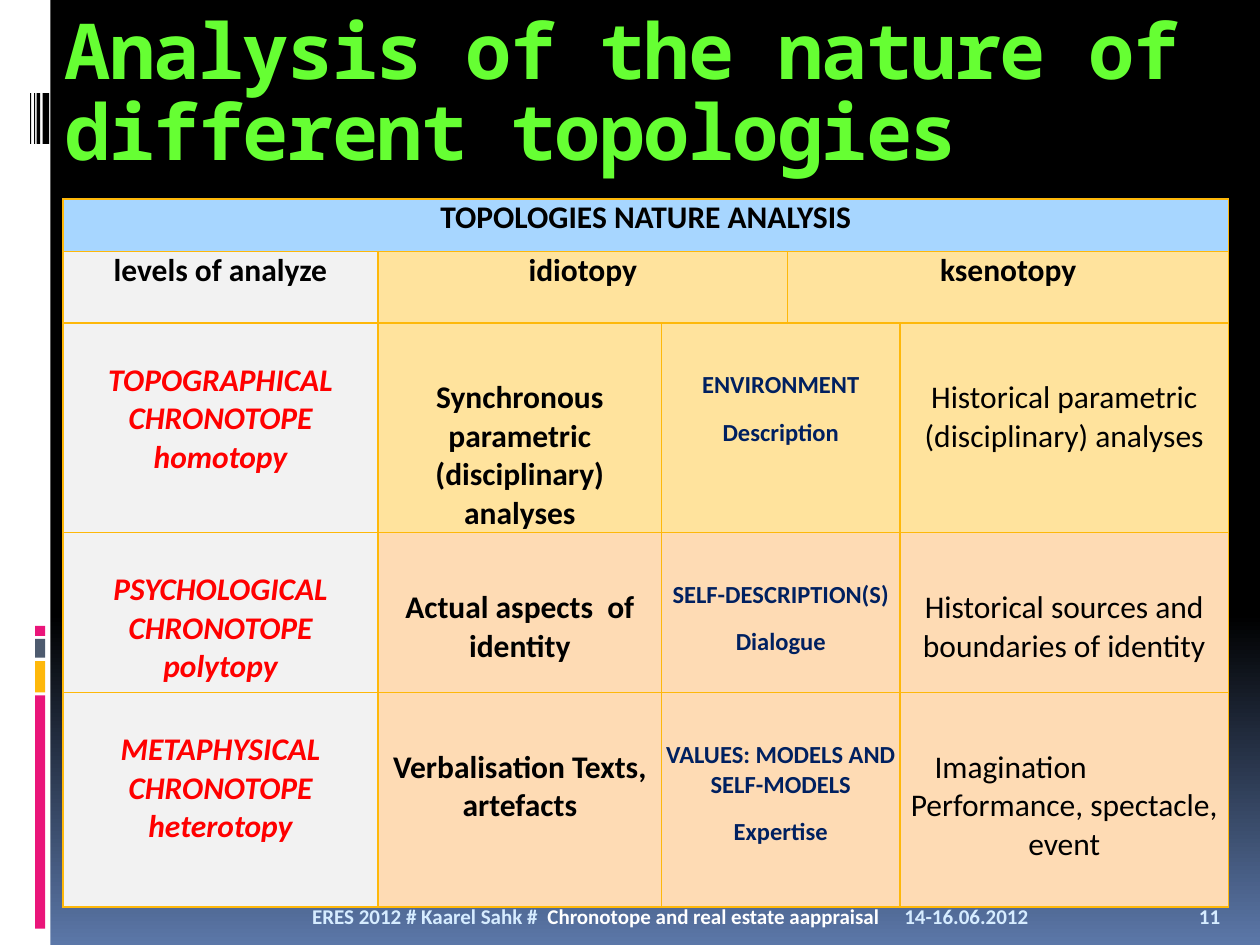
from pptx import Presentation
from pptx.dml.color import RGBColor
from pptx.enum.shapes import MSO_SHAPE
from pptx.enum.text import MSO_ANCHOR, PP_ALIGN
from pptx.oxml import parse_xml
from pptx.oxml.ns import nsdecls
from pptx.util import Cm, Pt

COLORS = {
    "black": "000000", "white": "FFFFFF", "dusk": "5B77A8", "pink": "EA157A",
    "gold": "FEB80A", "slate": "4E5B6F", "green": "66FF33", "ice": "D6ECFF",
    "sky": "A7D6FF", "grey": "F2F2F2", "sand": "FFE39D", "peach": "FEDBB4",
    "red": "FF0000", "navy": "002060",
}


def rgb(name):
    return RGBColor.from_string(COLORS[name])


class SlideBuilder:
    """Holds the text style and the current page, and draws its elements."""

    def __init__(self, page, font="Calibri"):
        self.page = page
        self.font = font

    def background(self, start, end, position):
        fill = self.page.background.fill
        fill.gradient()
        fill.gradient_angle = 270
        first, last = fill.gradient_stops
        first.color.rgb, first.position = rgb(start), position
        last.color.rgb, last.position = rgb(end), 1

    def bar(self, left, top, width, height, color):
        shape = self.page.shapes.add_shape(
            MSO_SHAPE.RECTANGLE, Cm(left), Cm(top), Cm(width), Cm(height))
        shape.shadow.inherit = False
        shape.fill.solid()
        shape.fill.fore_color.rgb = rgb(color)
        shape.line.fill.background()

    def style(self, para, size, color=None, bold=True, italic=False, font=None):
        para.font.name = font or self.font
        para.font.size = Pt(size)
        para.font.bold = bold
        para.font.italic = italic
        if color:
            para.font.color.rgb = rgb(color)

    def text(self, place, spans, size=12, font=None, align=PP_ALIGN.LEFT,
             anchor=MSO_ANCHOR.BOTTOM):
        box = self.page.shapes.add_textbox(*map(Cm, place))
        frame = box.text_frame
        frame.word_wrap = True
        frame.vertical_anchor = anchor
        para = frame.paragraphs[0]
        para.alignment = align
        self.style(para, size, font=font)
        for words, color in spans:
            span = para.add_run()
            span.text = words
            span.font.color.rgb = rgb(color)
        return para

    def title(self, place, words):
        para = self.text(place, [(words, "green")], 44, "Noto Sans Mono",
                         anchor=MSO_ANCHOR.TOP)
        para.line_spacing = 0.88
        para.runs[0].font._element.set("spc", "-100")

    def table(self, left, top, widths, heights):
        frame = self.page.shapes.add_table(
            len(heights), len(widths), Cm(left), Cm(top),
            Cm(sum(widths)), Cm(sum(heights)))
        table = frame.table
        for column, width in zip(table.columns, widths):
            column.width = Cm(width)
        for row, height in zip(table.rows, heights):
            row.height = Cm(height)
        for cell in table.iter_cells():
            self.border(cell, "gold", 0.94)
        return table

    def border(self, cell, color, points):
        properties = cell._tc.get_or_add_tcPr()
        for side in ("lnL", "lnR", "lnT", "lnB"):
            properties.append(parse_xml(
                f'<a:{side} {nsdecls("a")} w="{Pt(points)}"><a:solidFill>'
                f'<a:srgbClr val="{COLORS[color]}"/></a:solidFill></a:{side}>'))

    def cell(self, cell, lines, fill, gap=0, spacing=5, **style):
        cell.margin_left = cell.margin_right = cell.margin_bottom = 0
        cell.margin_top = Cm(gap)
        cell.fill.solid()
        cell.fill.fore_color.rgb = rgb(fill)
        frame = cell.text_frame
        for index, words in enumerate(lines):
            para = frame.add_paragraph() if index else frame.paragraphs[0]
            para.text = words
            para.alignment = PP_ALIGN.CENTER
            para.space_before = para.space_after = Pt(spacing)
            self.style(para, **style)


BARS = [
    (0, 0, 1.02, 19.05, "white"),
    (0.71, 14.02, 0.2, 4.7, "pink"),
    (0.71, 13.33, 0.2, 0.63, "gold"),
    (0.71, 12.88, 0.2, 0.38, "slate"),
    (0.71, 12.62, 0.2, 0.2, "pink"),
    (0.86, 1.88, 0.13, 1.02, "black"),
    (0.74, 1.88, 0.07, 1.02, "black"),
    (0.69, 1.88, 0.02, 1.02, "black"),
    (0.61, 1.88, 0.02, 1.02, "black"),
]

LEVELS = [
    ("sand", ["TOPOGRAPHICAL", "CHRONOTOPE", "homotopy"],
     ["Synchronous parametric (disciplinary) analyses"],
     ["ENVIRONMENT", "Description"],
     ["Historical parametric (disciplinary) analyses"]),
    ("peach", ["PSYCHOLOGICAL", "CHRONOTOPE", "polytopy"],
     ["Actual aspects  of identity"],
     ["SELF-DESCRIPTION(S)", "Dialogue"],
     ["Historical sources and boundaries of identity"]),
    ("peach", ["METAPHYSICAL", "CHRONOTOPE", "heterotopy"],
     ["Verbalisation Texts, artefacts"],
     ["VALUES: MODELS AND SELF-MODELS", "Expertise"],
     ["Imagination", "Performance, spectacle, event"]),
]


def fill_table(builder, table):
    table.cell(0, 0).merge(table.cell(0, 4))
    table.cell(1, 1).merge(table.cell(1, 2))
    table.cell(1, 3).merge(table.cell(1, 4))
    headings = [
        (0, 0, "TOPOLOGIES NATURE ANALYSIS", "sky"),
        (1, 0, "levels of analyze", "grey"),
        (1, 1, "idiotopy", "sand"),
        (1, 3, "ksenotopy", "sand"),
    ]
    for row, column, words, fill in headings:
        builder.cell(table.cell(row, column), [words], fill, size=18, color="black")
    for row, (fill, level, synchronous, method, history) in enumerate(LEVELS, 2):
        table.cell(row, 2).merge(table.cell(row, 3))
        builder.cell(table.cell(row, 0), level, "grey", 0.77, 0,
                     size=18, color="red", italic=True)
        builder.cell(table.cell(row, 1), synchronous, fill, 1.13,
                     size=18, color="black")
        builder.cell(table.cell(row, 2), method, fill, 0.96,
                     size=14, color="navy")
        builder.cell(table.cell(row, 4), history, fill, 1.13, 0,
                     size=18, color="black", bold=False)
    imagination = table.cell(4, 4).text_frame.paragraphs[0]
    imagination.alignment = PP_ALIGN.LEFT
    imagination._p.get_or_add_pPr().set("marL", str(Cm(0.7)))


def main():
    deck = Presentation()
    deck.slide_width, deck.slide_height = Cm(25.4), Cm(19.05)
    builder = SlideBuilder(deck.slides.add_slide(deck.slide_layouts[6]))
    builder.background("black", "dusk", 0.65)
    for bar in BARS:
        builder.bar(*bar)
    builder.title((1.06, 0.17, 24.34, 2.54),
                  "Analysis of the nature of different topologies")
    builder.text((17.98, 17.83, 5.92, 1.02), [("14-16.06.2012", "ice")])
    builder.text((2.54, 17.83, 15.44, 1.02),
                 [("ERES 2012 # Kaarel Sahk #  ", "ice"),
                  ("Chronotope and real estate aappraisal", "white")],
                 align=PP_ALIGN.RIGHT)
    builder.text((23.92, 17.83, 1.27, 1.02), [("11", "ice")])
    table = builder.table(1.27, 4.01, [6.35, 5.72, 2.54, 2.26, 6.63],
                          [1.06, 1.44, 4.23, 3.22, 4.32])
    fill_table(builder, table)
    deck.save("out.pptx")


if __name__ == "__main__":
    main()
